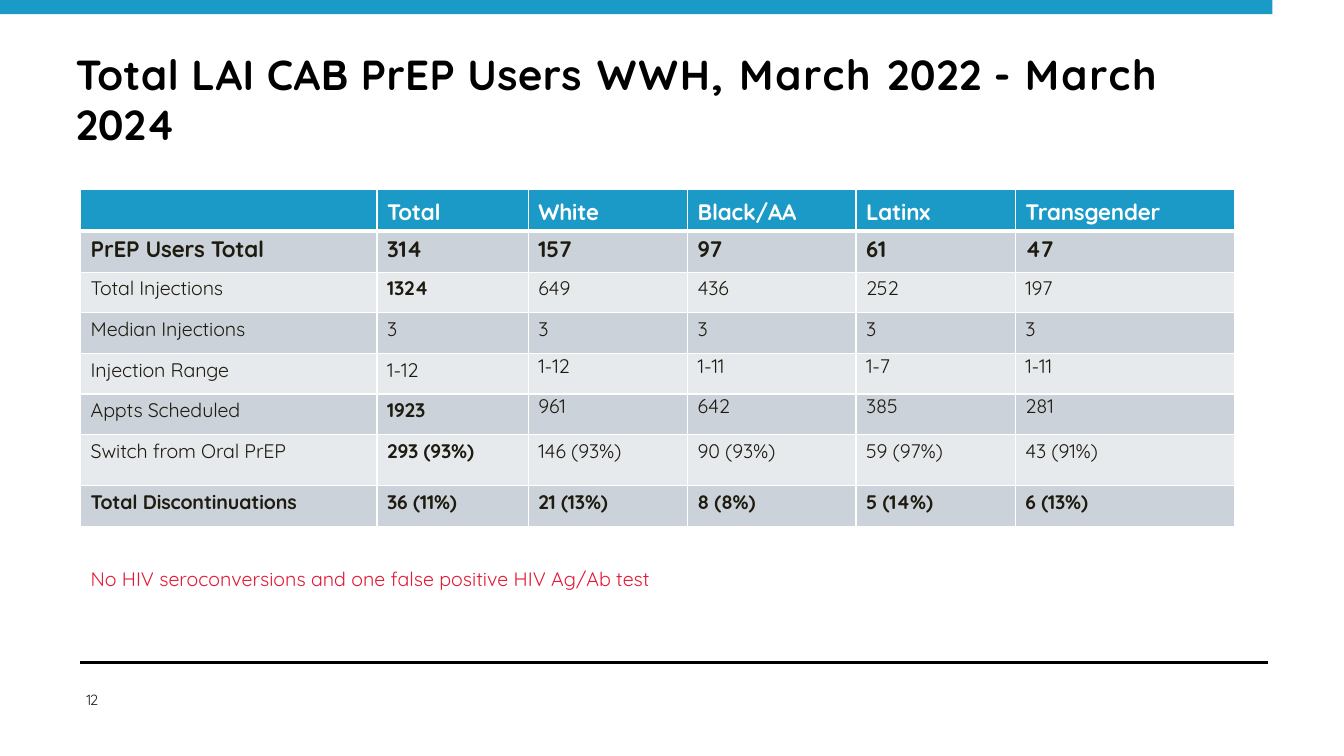
import pptx
import pptx.util
import pptx.dml.color
import pptx.enum.shapes
import pptx.enum.text
import pptx.oxml

Inches, Pt = pptx.util.Inches, pptx.util.Pt
ANCHOR = pptx.enum.text.MSO_ANCHOR
ALIGN = pptx.enum.text.PP_ALIGN

THEME = {
    "font": "Quicksand",
    "bar": "1A9AC7", "header": "1B9AC7", "bands": ("CCD2D9", "E7EAED"),
    "white": "FFFFFF", "black": "000000", "body": "1E1C11",
    "note": "E31836", "number": "1F1F1F",
    "title_pt": 30, "header_pt": 16, "body_pt": 14, "number_pt": 10.5,
}

TITLE = [("Total LAI CAB PrEP Users", 0.3), (" WWH, March ", 1.4),
         ("2022 -", 0.3), (" March ", 1.4), ("2024", -0.2)]
NOTE = "No HIV seroconversions and one false positive HIV Ag/Ab test"
PAGE = "12"
HEADER = ["", "Total", "White", "Black/AA", "Latinx", "Transgender"]
ROWS = [
    ["PrEP Users Total", "314", "157", "97", "61", "47"],
    ["Total Injections", "1324", "649", "436", "252", "197"],
    ["Median Injections", "3", "3", "3", "3", "3"],
    ["Injection Range", "1-12", "1-12", "1-11", "1-7", "1-11"],
    ["Appts Scheduled", "1923", "961", "642", "385", "281"],
    ["Switch from Oral PrEP", "293 (93%)", "146 (93%)", "90 (93%)", "59 (97%)", "43 (91%)"],
    ["Total Discontinuations", "36 (11%)", "21 (13%)", "8 (8%)", "5 (14%)", "6 (13%)"],
]
BOLD_ROWS = {"PrEP Users Total", "Total Discontinuations"}
BOLD_TOTALS = {"Total Injections", "Appts Scheduled", "Switch from Oral PrEP"}
RAISED_ROWS = {"Injection Range", "Appts Scheduled"}
COL_WIDTHS = [2.94, 1.5, 1.58, 1.67, 1.58, 2.18]
ROW_HEIGHTS = [0.41, 0.41, 0.4, 0.41, 0.4, 0.4, 0.51, 0.4]


def rgb(name):
    return pptx.dml.color.RGBColor.from_string(THEME.get(name, name))


def add_run(p, text, size, color, bold=False, spacing=0):
    r = p.add_run()
    r.text = text
    r.font.name = THEME["font"]
    r.font.size = Pt(THEME[size])
    r.font.bold = bold
    r.font.color.rgb = rgb(color)
    if spacing:
        r.font._element.set("spc", str(round(spacing * 100)))


def set_margins(target, left, top, right=0, bottom=0):
    target.margin_left, target.margin_top = Inches(left), Inches(top)
    target.margin_right, target.margin_bottom = Inches(right), Inches(bottom)


def add_text(s, box, margins, wrap=True):
    tf = s.shapes.add_textbox(*map(Inches, box)).text_frame
    tf.word_wrap = wrap
    set_margins(tf, *margins)
    return tf


def set_borders(cell, bottom):
    tc_pr = cell._tc.get_or_add_tcPr()
    widths = {"lnL": 1, "lnR": 1, "lnT": 1, "lnB": bottom}
    for i, (side, width) in enumerate(widths.items()):
        tc_pr.insert(i, pptx.oxml.parse_xml(
            f'<a:{side} xmlns:a="http://schemas.openxmlformats.org/drawingml/2006/main" '
            f'w="{Pt(width)}"><a:solidFill><a:srgbClr val="{THEME["white"]}"/>'
            f'</a:solidFill></a:{side}>'))


def add_users_table(s):
    table = s.shapes.add_table(
        len(ROWS) + 1, len(HEADER), Inches(0.8), Inches(1.88),
        Inches(sum(COL_WIDTHS)), Inches(sum(ROW_HEIGHTS))).table
    for col, width in zip(table.columns, COL_WIDTHS):
        col.width = Inches(width)
    for row, height in zip(table.rows, ROW_HEIGHTS):
        row.height = Inches(height)
    for i, values in enumerate([HEADER] + ROWS):
        label, is_header = values[0], i == 0
        size = "header_pt" if i < 2 else "body_pt"
        for j, text in enumerate(values):
            cell = table.cell(i, j)
            raised = label in RAISED_ROWS and j > 1
            set_margins(cell, 0.1, 0 if raised else 0.04)
            cell.vertical_anchor = ANCHOR.MIDDLE if is_header else ANCHOR.TOP
            cell.fill.solid()
            cell.fill.fore_color.rgb = rgb("header" if is_header else THEME["bands"][(i - 1) % 2])
            set_borders(cell, 3 if is_header else 1)
            if text:
                bold = is_header or label in BOLD_ROWS or (j == 1 and label in BOLD_TOTALS)
                add_run(cell.text_frame.paragraphs[0], text, size,
                        "white" if is_header else "body", bold, -0.1)


def main():
    prs = pptx.Presentation()
    prs.slide_width, prs.slide_height = Inches(13.33), Inches(7.5)
    s = prs.slides.add_slide(prs.slide_layouts[6])

    bar = s.shapes.add_shape(pptx.enum.shapes.MSO_SHAPE.RECTANGLE,
                             0, 0, Inches(12.62), Inches(0.14))
    bar.shadow.inherit = False
    bar.fill.solid()
    bar.fill.fore_color.rgb = rgb("bar")
    bar.line.fill.background()

    rule = s.shapes.add_connector(pptx.enum.shapes.MSO_CONNECTOR.STRAIGHT,
                                  Inches(0.79), Inches(6.57), Inches(12.58), Inches(6.57))
    rule.line.color.rgb = rgb("black")
    rule.line.width = Pt(2)
    rule._element.spPr.append(pptx.oxml.parse_xml(
        '<a:effectLst xmlns:a="http://schemas.openxmlformats.org/drawingml/2006/main"/>'))

    tf = add_text(s, (0.79, 6.81, 0.25, 0.26), (0, 0), wrap=False)
    tf.vertical_anchor = ANCHOR.MIDDLE
    tf.paragraphs[0].alignment = ALIGN.CENTER
    add_run(tf.paragraphs[0], PAGE, "number_pt", "number", spacing=-1)

    tf = add_text(s, (0.75, 0.38, 11.83, 0.81), (0, 0.1))
    for text, spacing in TITLE:
        add_run(tf.paragraphs[0], text, "title_pt", "black", True, spacing)

    add_users_table(s)

    tf = add_text(s, (0.8, 5.58, 10.5, 0.34), (0.1, 0.05, 0.1, 0.05))
    add_run(tf.paragraphs[0], NOTE, "body_pt", "note")

    prs.save("out.pptx")


if __name__ == "__main__":
    main()
